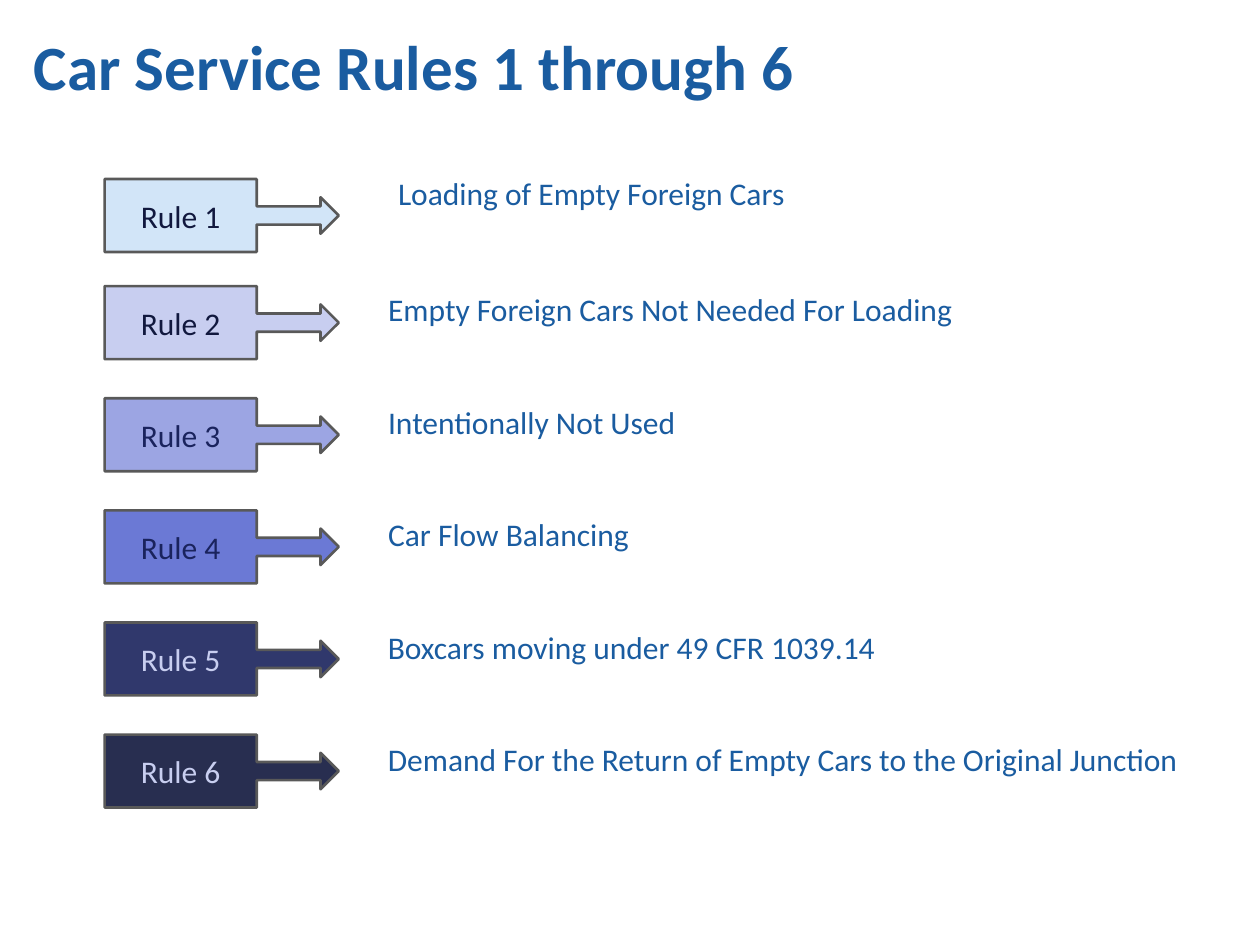
from dataclasses import dataclass

from pptx import Presentation
from pptx.dml.color import RGBColor as Rgb
from pptx.enum.shapes import MSO_SHAPE as Shape
from pptx.enum.text import MSO_ANCHOR as Anchor, MSO_AUTO_SIZE as AutoSize, PP_ALIGN as Align
from pptx.oxml.ns import qn
from pptx.util import Cm, Pt
from lxml.etree import SubElement


@dataclass(frozen=True)
class Theme:
    font: str = "Calibri"
    title_size: int = 36
    text_size: int = 18
    heading: str = "1A5CA0"
    outline: str = "595959"
    dark: str = "11183E"
    navy: str = "1A235D"
    pale: str = "C8CEF0"
    sky: str = "D2E5F8"
    lavender: str = "929CE0"
    indigo: str = "5B6BD1"


class RuleSlide:
    def __init__(self, deck, theme):
        self.theme = theme
        self.slide = deck.slides.add_slide(deck.slide_layouts.get_by_name("Comparison"))
        self.bodies = [
            holder for holder in self.slide.placeholders
            if holder.placeholder_format.idx in (1, 2, 3, 4)
        ]

    def place(self, element, left, top, width, height):
        element.left, element.top = Cm(left), Cm(top)
        element.width, element.height = Cm(width), Cm(height)

    def set_text(self, element, words, size, color, align, anchor, bold=False):
        frame = element.text_frame
        frame.word_wrap = True
        frame.auto_size = AutoSize.NONE
        frame.vertical_anchor = anchor
        paragraph = frame.paragraphs[0]
        paragraph.text = words
        paragraph.alignment = align
        paragraph.space_before = Pt(0)
        paragraph.font.name = self.theme.font
        paragraph.font.size = Pt(size)
        paragraph.font.bold = bold
        paragraph.font.color.rgb = Rgb.from_string(color)

    def title(self, words):
        heading = self.slide.shapes.title
        self.place(heading, 0.43, 0.43, 22.86, 1.78)
        self.set_text(heading, words, self.theme.title_size, self.theme.heading,
                      Align.LEFT, Anchor.MIDDLE, bold=True)

    def description(self, words, left, top):
        if self.bodies:
            body = self.bodies.pop(0)
        else:
            body = self.slide.shapes.add_textbox(0, 0, 0, 0)
        self.place(body, left, top, 17.15, 2.34)
        properties = body.text_frame.paragraphs[0]._p.get_or_add_pPr()
        properties.set("marL", str(Cm(0.15)))
        properties.set("indent", "0")
        SubElement(properties, qn("a:buNone"))
        self.set_text(body, words, self.theme.text_size, self.theme.heading,
                      Align.LEFT, Anchor.TOP)

    def callout(self, label, top, fill, color, opacity):
        callout = self.slide.shapes.add_shape(
            Shape.RIGHT_ARROW_CALLOUT, Cm(2.11), Cm(top), Cm(4.72), Cm(1.47))
        callout.shadow.inherit = False
        callout.fill.solid()
        callout.fill.fore_color.rgb = Rgb.from_string(fill)
        if opacity < 100:
            tint = callout._element.spPr.find(qn("a:solidFill")).find(qn("a:srgbClr"))
            SubElement(tint, qn("a:alpha"), val=str(opacity * 1000))
        callout.line.color.rgb = Rgb.from_string(self.theme.outline)
        callout.line.width = Pt(1.5)
        self.set_text(callout, label, self.theme.text_size, color,
                      Align.CENTER, Anchor.MIDDLE)


def main():
    theme = Theme()
    deck = Presentation()
    deck.slide_width, deck.slide_height = Cm(25.4), Cm(19.05)
    page = RuleSlide(deck, theme)
    page.title("Car Service Rules 1 through 6")

    rules = [
        ("Loading of Empty Foreign Cars", theme.sky, theme.dark, 100),
        ("Empty Foreign Cars Not Needed For Loading", theme.pale, theme.dark, 100),
        ("Intentionally Not Used", theme.lavender, theme.navy, 90),
        ("Car Flow Balancing", theme.indigo, theme.navy, 90),
        ("Boxcars moving under 49 CFR 1039.14", theme.navy, theme.pale, 90),
        ("Demand For the Return of Empty Cars to the Original Junction",
         theme.dark, theme.pale, 90),
    ]
    for number, (meaning, fill, color, opacity) in enumerate(rules, start=1):
        first = number == 1
        callout_top = 3.61 if first else 5.77 + 2.26 * (number - 2)
        meaning_top = 3.38 if first else 5.72 + 2.27 * (number - 2)
        page.callout(f"Rule {number}", callout_top, fill, color, opacity)
        page.description(meaning, 7.62 if first else 7.42, meaning_top)

    deck.save("out.pptx")


if __name__ == "__main__":
    main()
